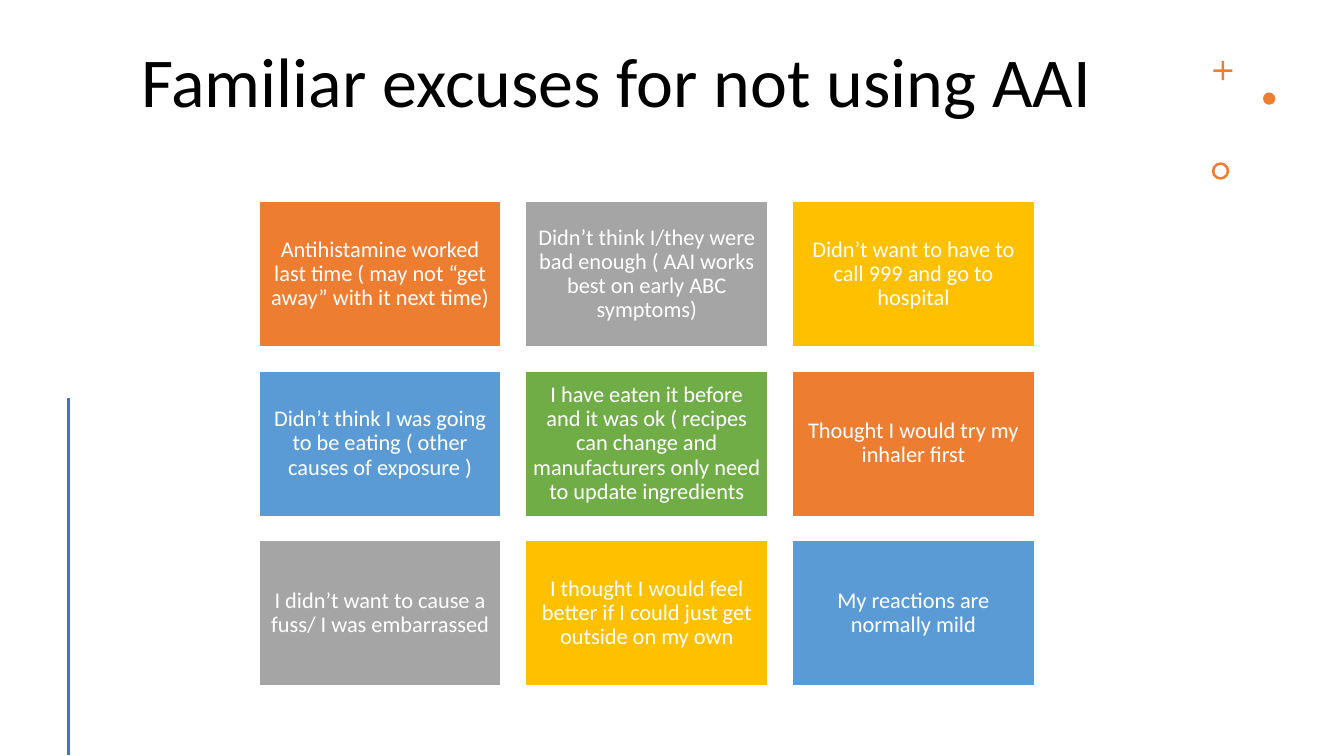
from pptx import Presentation
from pptx.dml.color import RGBColor
from pptx.enum.shapes import MSO_CONNECTOR, MSO_SHAPE
from pptx.enum.text import MSO_ANCHOR, MSO_AUTO_SIZE, PP_ALIGN
from pptx.oxml.ns import qn
from pptx.util import Cm, Pt
from lxml import etree

BLACK = RGBColor(0x00, 0x00, 0x00)
WHITE = RGBColor(0xFF, 0xFF, 0xFF)
ORANGE = RGBColor(0xED, 0x7D, 0x31)
GREY = RGBColor(0xA5, 0xA5, 0xA5)
GOLD = RGBColor(0xFF, 0xC0, 0x00)
BLUE = RGBColor(0x5B, 0x9B, 0xD5)
GREEN = RGBColor(0x70, 0xAD, 0x47)
DARK_BLUE = RGBColor(0x44, 0x72, 0xC4)

EXCUSES = [
    ("Antihistamine worked last time ( may not “get away” with it next time)", ORANGE),
    ("Didn’t think I/they were bad enough ( AAI works best on early ABC symptoms)", GREY),
    ("Didn’t want to have to call 999 and go to hospital", GOLD),
    ("Didn’t think I was going to be eating ( other causes of exposure )", BLUE),
    ("I have eaten it before and it was ok ( recipes can change and "
     "manufacturers only need to update ingredients", GREEN),
    ("Thought I would try my inhaler first", ORANGE),
    ("I didn’t want to cause a fuss/ I was embarrassed", GREY),
    ("I thought I would feel better if I could just get outside on my own", GOLD),
    ("My reactions are normally mild", BLUE),
]
COLUMNS = 3
CARD_LEFT, CARD_TOP = 6.53, 5.08
CARD_W, CARD_H = 6.1, 3.66
PITCH_X, PITCH_Y = 6.72, 4.27


class SlideBuilder:
    font = "Calibri"
    title_size = Pt(50)
    card_size = Pt(16)
    card_inset = Cm(0.18)

    def __init__(self, prs):
        self.slide = prs.slides.add_slide(prs.slide_layouts[5])

    def format_paragraph(self, p, size, color, align):
        p.alignment = align
        p.line_spacing = 0.9
        p.font.name = self.font
        p.font.size = size
        p.font.color.rgb = color

    def title(self, text, x, y, w, h):
        sp = self.slide.shapes.title
        sp.left, sp.top, sp.width, sp.height = Cm(x), Cm(y), Cm(w), Cm(h)
        tf = sp.text_frame
        tf.text = text
        tf.auto_size = MSO_AUTO_SIZE.NONE
        tf.vertical_anchor = MSO_ANCHOR.TOP
        self.format_paragraph(tf.paragraphs[0], self.title_size, BLACK, PP_ALIGN.LEFT)

    def shape(self, kind, x, y, w, h, fill, adjustment=None):
        sp = self.slide.shapes.add_shape(kind, Cm(x), Cm(y), Cm(w), Cm(h))
        sp.shadow.inherit = False
        sp.fill.solid()
        sp.fill.fore_color.rgb = fill
        sp.line.fill.background()
        if adjustment is not None:
            sp.adjustments[0] = adjustment
        return sp

    def card(self, text, x, y, w, h, fill):
        sp = self.shape(MSO_SHAPE.RECTANGLE, x, y, w, h, fill)
        sp.line.color.rgb = WHITE
        sp.line.width = Pt(1)
        tf = sp.text_frame
        tf.text = text
        tf.word_wrap = True
        tf.vertical_anchor = MSO_ANCHOR.MIDDLE
        tf.margin_left = tf.margin_right = self.card_inset
        tf.margin_top = tf.margin_bottom = self.card_inset
        self.format_paragraph(tf.paragraphs[0], self.card_size, WHITE, PP_ALIGN.CENTER)

    def line(self, x1, y1, x2, y2, color, width):
        line = self.slide.shapes.add_connector(
            MSO_CONNECTOR.STRAIGHT, Cm(x1), Cm(y1), Cm(x2), Cm(y2))
        line.line.color.rgb = color
        line.line.width = Pt(width)
        etree.SubElement(line._element.spPr, qn("a:effectLst"))


def main():
    prs = Presentation()
    prs.slide_width, prs.slide_height = Cm(33.87), Cm(19.05)
    s = SlideBuilder(prs)

    # Title
    s.title("Familiar excuses for not using AAI", 3.3, 1.07, 25.98, 3.33)

    # Corner ornaments: plus, dot and ring
    s.shape(MSO_SHAPE.CROSS, 30.58, 1.54, 0.48, 0.48, ORANGE, 0.43)
    s.shape(MSO_SHAPE.OVAL, 31.83, 2.33, 0.31, 0.31, ORANGE)
    s.shape(MSO_SHAPE.DONUT, 30.54, 4.09, 0.44, 0.44, ORANGE, 0.15)

    # Accent line on the left
    s.line(1.73, 10.03, 1.73, 19.03, DARK_BLUE, 2)

    # Grid of excuses
    for i, (text, fill) in enumerate(EXCUSES):
        row, col = divmod(i, COLUMNS)
        s.card(text, CARD_LEFT + col * PITCH_X, CARD_TOP + row * PITCH_Y,
               CARD_W, CARD_H, fill)

    prs.save("out.pptx")


if __name__ == "__main__":
    main()
